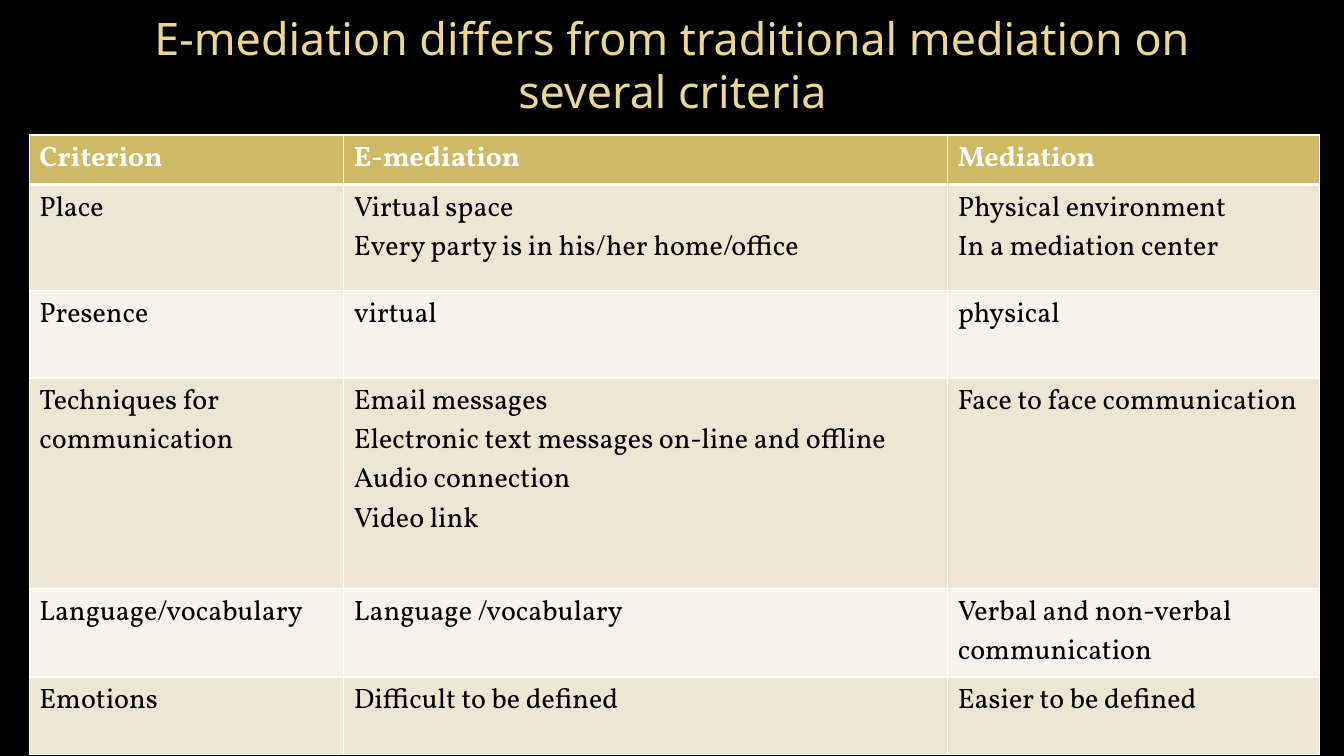
from dataclasses import dataclass

from lxml.etree import SubElement
from pptx import Presentation
from pptx.dml.color import RGBColor
from pptx.enum.text import MSO_ANCHOR, PP_ALIGN
from pptx.oxml.ns import qn
from pptx.util import Inches, Pt


@dataclass(frozen=True)
class Theme:
    background: str = "000000"
    title: str = "EAD696"
    header_fill: str = "CEB966"
    header_text: str = "FFFFFF"
    body_text: str = "000000"
    bands: tuple = ("EDE6D3", "F6F3EA")
    border: str = "FFFFFF"
    title_font: str = "Noto Sans"
    table_font: str = "Vollkorn"
    title_size: int = 32
    table_size: int = 20
    thin_line: int = 1
    thick_line: int = 3


COLUMN_WIDTHS = (3.12, 5.99, 3.69)
ROW_HEIGHTS = (0.49, 1.05, 0.87, 2.09, 0.87, 0.77)
CRITERIA = (
    ("Criterion", "E-mediation", "Mediation"),
    ("Place",
     "Virtual space\nEvery party is in his/her home/office",
     "Physical environment\nIn a mediation center"),
    ("Presence", "virtual", "physical"),
    ("Techniques for\ncommunication",
     "Email messages\nElectronic text messages on-line and offline\n"
     "Audio connection\nVideo link",
     "Face to face communication"),
    ("Language/vocabulary", "Language /vocabulary",
     "Verbal and non-verbal communication"),
    ("Emotions", "Difficult to be defined", "Easier to be defined"),
)


class SlideBuilder:
    def __init__(self, presentation, theme):
        self.theme = theme
        self.slide = presentation.slides.add_slide(presentation.slide_layouts[5])
        fill = self.slide.background.fill
        fill.solid()
        fill.fore_color.rgb = RGBColor.from_string(theme.background)

    def add_run(self, paragraph, text, font_name, size, color, bold=False):
        run = paragraph.add_run()
        run.text = text
        run.font.name = font_name
        run.font.size = Pt(size)
        run.font.bold = bold
        run.font.color.rgb = RGBColor.from_string(color)

    def add_title(self, text, left, top, width, height):
        title = self.slide.shapes.title
        title.left, title.top = Inches(left), Inches(top)
        title.width, title.height = Inches(width), Inches(height)
        frame = title.text_frame
        frame.word_wrap = True
        frame.margin_left = frame.margin_right = Inches(0.2)
        frame.vertical_anchor = MSO_ANCHOR.MIDDLE
        paragraph = frame.paragraphs[0]
        paragraph.alignment = PP_ALIGN.CENTER
        self.add_run(paragraph, text, self.theme.title_font,
                     self.theme.title_size, self.theme.title)

    def add_table(self, rows, left, top, widths, heights):
        table = self.slide.shapes.add_table(
            len(rows), len(widths), Inches(left), Inches(top),
            Inches(sum(widths)), Inches(sum(heights))).table
        for column, width in zip(table.columns, widths):
            column.width = Inches(width)
        for row, height in zip(table.rows, heights):
            row.height = Inches(height)
        for row_index, texts in enumerate(rows):
            for column_index, text in enumerate(texts):
                self.format_cell(table.cell(row_index, column_index), text, row_index)

    def format_cell(self, cell, text, row_index):
        theme = self.theme
        is_header = row_index == 0
        self.add_borders(cell, row_index)
        cell.fill.solid()
        fill_color = theme.header_fill if is_header else theme.bands[(row_index - 1) % 2]
        cell.fill.fore_color.rgb = RGBColor.from_string(fill_color)
        text_color = theme.header_text if is_header else theme.body_text
        frame = cell.text_frame
        for index, line in enumerate(text.split("\n")):
            paragraph = frame.add_paragraph() if index else frame.paragraphs[0]
            self.add_run(paragraph, line, theme.table_font, theme.table_size,
                         text_color, is_header)

    def add_borders(self, cell, row_index):
        properties = cell._tc.get_or_add_tcPr()
        thick_side = {0: "lnB", 1: "lnT"}.get(row_index)
        for side in ("lnL", "lnR", "lnT", "lnB"):
            width = self.theme.thick_line if side == thick_side else self.theme.thin_line
            line = SubElement(properties, qn(f"a:{side}"), w=str(Pt(width)))
            fill = SubElement(line, qn("a:solidFill"))
            SubElement(fill, qn("a:srgbClr"), val=self.theme.border)


def main():
    presentation = Presentation()
    presentation.slide_width = Inches(13.33)
    presentation.slide_height = Inches(7.5)
    builder = SlideBuilder(presentation, Theme())
    builder.add_title("E-mediation differs from traditional mediation on several criteria",
                      0.67, 0, 12, 1.27)
    builder.add_table(CRITERIA, 0.29, 1.34, COLUMN_WIDTHS, ROW_HEIGHTS)
    presentation.save("out.pptx")


if __name__ == "__main__":
    main()
